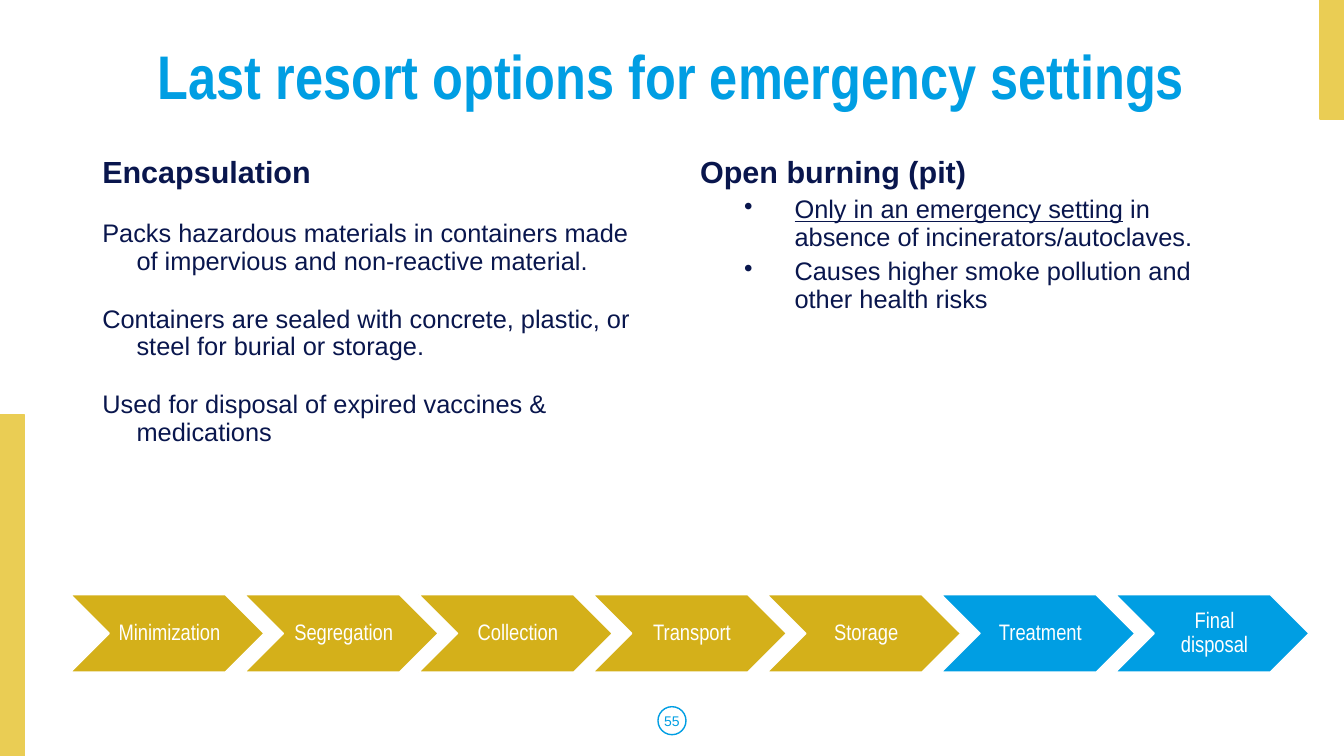
"""Build the slide on last resort waste options for emergency settings."""
from dataclasses import dataclass

from lxml import etree
from pptx import Presentation
from pptx.dml.color import RGBColor
from pptx.enum.shapes import MSO_SHAPE
from pptx.enum.text import MSO_ANCHOR, PP_ALIGN
from pptx.oxml.ns import qn
from pptx.util import Pt

RECTANGLE, OVAL, CHEVRON = MSO_SHAPE.RECTANGLE, MSO_SHAPE.OVAL, MSO_SHAPE.CHEVRON
CENTER, LEFT = PP_ALIGN.CENTER, PP_ALIGN.LEFT
TOP, MIDDLE = MSO_ANCHOR.TOP, MSO_ANCHOR.MIDDLE

COLORS = {
    "blue": "009EE3",
    "navy": "09164D",
    "gold": "D4B01A",
    "sand": "EACD54",
    "white": "FFFFFF",
}


@dataclass(frozen=True)
class Box:
    left: float
    top: float
    width: float
    height: float


@dataclass(frozen=True)
class TextStyle:
    size: float
    color: str
    font: str = "Arial"
    bold: bool = False
    align: int = LEFT
    line_spacing: float = 0.9
    before: float = 0
    after: float = 0
    margin: float = 0
    indent: float = 0
    bullet: str = ""


@dataclass(frozen=True)
class Line:
    text: str
    style: TextStyle
    underlined: str = ""


TITLE = TextStyle(44, "blue", "Arial Narrow", bold=True, align=CENTER)
LEFT_HEADING = TextStyle(21.8, "navy", bold=True, before=10, after=12)
RIGHT_HEADING = TextStyle(21.8, "navy", bold=True, before=10)
HANGING = TextStyle(18.1, "navy", before=10, after=12, margin=24.5, indent=-24.5)
BULLET = TextStyle(18.1, "navy", before=5, margin=67.5, indent=-36, bullet="•")
STEP = TextStyle(16, "white", "Arial Narrow", align=CENTER)
PAGE_NUMBER = TextStyle(10, "blue", align=CENTER, line_spacing=1)

SIDE_BARS = [Box(0, 296, 17.3, 244), Box(943, 0, 17, 85)]
TITLE_BOX = Box(66, 28.8, 828, 56.2)
COLUMN_TOP, COLUMN_WIDTH, COLUMN_HEIGHT = 108.7, 401, 391.7

COLUMNS = {
    66: [
        Line("Encapsulation", LEFT_HEADING),
        Line("Packs hazardous materials in containers made of impervious "
             "and non-reactive material.", HANGING),
        Line("Containers are sealed with concrete, plastic, or steel "
             "for burial or storage.", HANGING),
        Line("Used for disposal of expired vaccines & medications", HANGING),
    ],
    493: [
        Line("Open burning (pit)", RIGHT_HEADING),
        Line(" in absence of incinerators/autoclaves.", BULLET,
             underlined="Only in an emergency setting"),
        Line("Causes higher smoke pollution and other health risks", BULLET),
    ],
}

STEPS = {
    "Minimization": "gold",
    "Segregation": "gold",
    "Collection": "gold",
    "Transport": "gold",
    "Storage": "gold",
    "Treatment": "blue",
    "Final disposal": "blue",
}
FIRST_STEP = Box(50.4, 424.8, 138.2, 55.3)
STEP_PITCH = 124.4


def rgb(name: str) -> RGBColor:
    return RGBColor.from_string(COLORS[name])


def place(box: Box) -> tuple:
    return Pt(box.left), Pt(box.top), Pt(box.width), Pt(box.height)


def write(shape, lines: list, anchor=TOP, insets=(7.2, 3.6, 7.2, 3.6), wrap: bool = True) -> None:
    frame = shape.text_frame
    frame.word_wrap = wrap
    frame.vertical_anchor = anchor
    frame.margin_left, frame.margin_top, frame.margin_right, frame.margin_bottom = map(Pt, insets)
    for index, line in enumerate(lines):
        paragraph = frame.add_paragraph() if index else frame.paragraphs[0]
        format_paragraph(paragraph, line.style)
        if line.underlined:
            run = paragraph.add_run()
            run.text = line.underlined
            run.font.underline = True
        paragraph.add_run().text = line.text


def format_paragraph(paragraph, style: TextStyle) -> None:
    properties = paragraph._p.get_or_add_pPr()
    properties.set("marL", str(Pt(style.margin)))
    properties.set("indent", str(Pt(style.indent)))
    if style.bullet:
        etree.SubElement(properties, qn("a:buChar"), char=style.bullet)
    paragraph.alignment = style.align
    paragraph.line_spacing = style.line_spacing
    paragraph.space_before = Pt(style.before)
    paragraph.space_after = Pt(style.after)
    font = paragraph.font
    font.name, font.size, font.bold = style.font, Pt(style.size), style.bold
    font.color.rgb = rgb(style.color)


def add_shape(slide, kind, box: Box, line: str, fill: str = ""):
    shape = slide.shapes.add_shape(kind, *place(box))
    shape.shadow.inherit = False
    if fill:
        shape.fill.solid()
        shape.fill.fore_color.rgb = rgb(fill)
    else:
        shape.fill.background()
    shape.line.color.rgb = rgb(line)
    shape.line.width = Pt(1)
    return shape


def add_text(slide, box: Box, lines: list, anchor=TOP) -> None:
    write(slide.shapes.add_textbox(*place(box)), lines, anchor)


def main() -> None:
    presentation = Presentation()
    presentation.slide_width, presentation.slide_height = Pt(960), Pt(540)
    slide = presentation.slides.add_slide(presentation.slide_layouts[6])

    for bar in SIDE_BARS:
        add_shape(slide, RECTANGLE, bar, "sand", "sand")
    add_text(slide, TITLE_BOX, [Line("Last resort options for emergency settings", TITLE)], MIDDLE)
    for left, lines in COLUMNS.items():
        add_text(slide, Box(left, COLUMN_TOP, COLUMN_WIDTH, COLUMN_HEIGHT), lines)

    for index, (label, color) in enumerate(STEPS.items()):
        box = Box(FIRST_STEP.left + index * STEP_PITCH, FIRST_STEP.top,
                  FIRST_STEP.width, FIRST_STEP.height)
        chevron = add_shape(slide, CHEVRON, box, "white", color)
        write(chevron, [Line(label, STEP)], MIDDLE, insets=(5, 1.7, 1.7, 1.7))

    badge = add_shape(slide, OVAL, Box(470, 504.8, 20, 20), "blue")
    write(badge, [Line("55", PAGE_NUMBER)], MIDDLE, insets=(0, 0, 0, 0), wrap=False)
    presentation.save("out.pptx")


if __name__ == "__main__":
    main()
